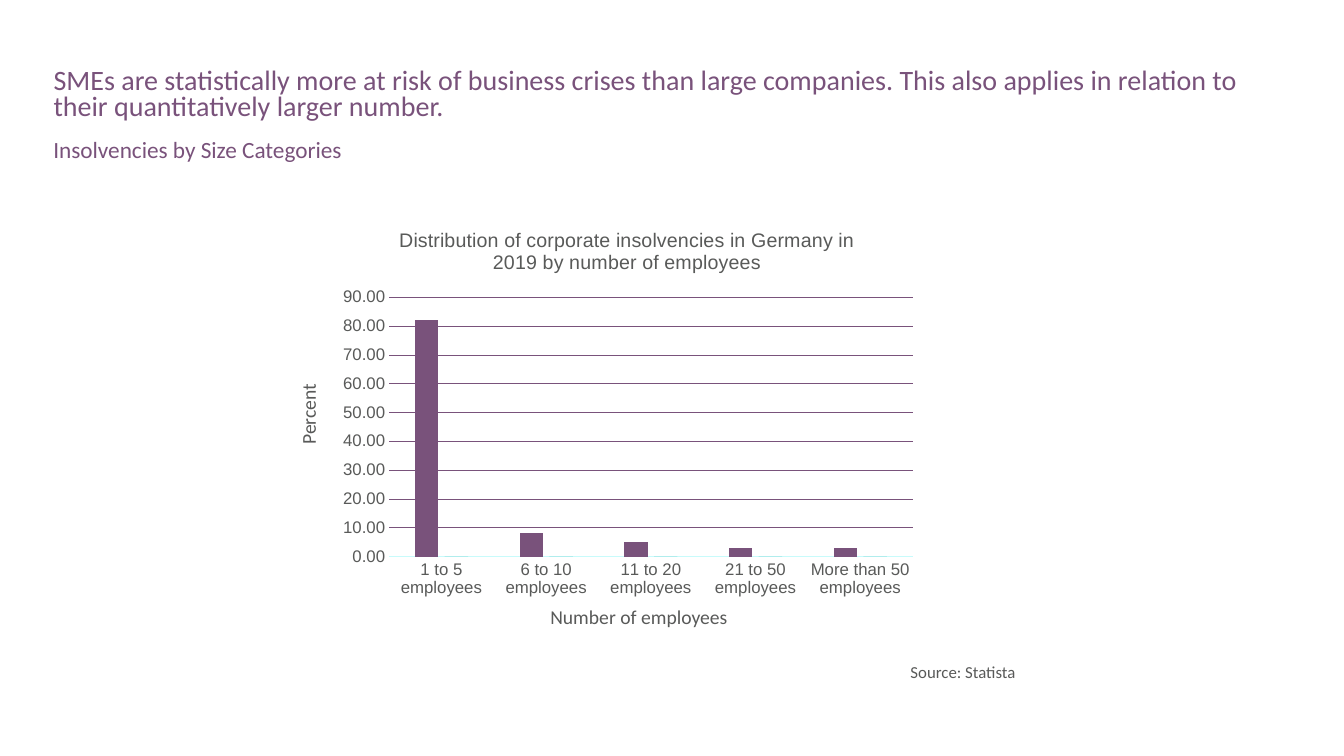
import pptx
import pptx.chart.data
import pptx.dml.color
import pptx.enum.chart
import pptx.enum.text
import pptx.util
from lxml import etree

COLOURS = {"plum": "79527B", "grey": "595A59", "teal": "0D9390", "mint": "C8FBFB"}

HEADLINE = ("SMEs are statistically more at risk of business crises than large companies. "
            "This also applies in relation to their quantitatively larger number.")
TEXTS = [
    {"text": "Insolvencies by Size Categories", "place": (3.23, 18, 94.07, 4.4),
     "size": 16.6, "colour": "plum", "spacing": 0.8},
    {"text": "Source: Statista", "place": (67.07, 86.27, 13.88, 4),
     "size": 12, "colour": "grey", "spacing": 1.25, "inset": (0.09, 0.04)},
    {"text": "Percent", "place": (18.53, 50, 8.85, 4.53),
     "size": 14, "colour": "grey", "rotation": 270},
    {"text": "Number of employees", "place": (40.21, 79.33, 20.03, 7.6),
     "size": 14, "colour": "grey"},
]
HEADLINE_FORMAT = {"text": HEADLINE, "place": (3.23, 8.4, 94.07, 8.53),
                   "size": 20, "colour": "plum", "spacing": 0.8}

CHART_TITLE = "Distribution of corporate insolvencies in Germany in 2019 by number of employees"
CHART_PLACE = (24.53, 27.87, 44.26, 52)
PLOT_SHARES = {"x": 0.1, "y": 0.22, "w": 0.88, "h": 0.66}
SIZES = ["1 to 5 employees", "6 to 10 employees", "11 to 20 employees",
         "21 to 50 employees", "More than 50 employees"]
SERIES = [("Series 1", (82, 8, 5, 3, 3), "plum"),
          ("Series 2", (0, 0, 0, 0, 0), "teal")]

deck = pptx.Presentation()
deck.slide_width = pptx.util.Inches(13.33)
deck.slide_height = pptx.util.Inches(7.5)
slide = deck.slides.add_slide(deck.slide_layouts[5])


def rgb(name):
    return pptx.dml.color.RGBColor.from_string(COLOURS[name])


def area(place):
    column, row = deck.slide_width / 100, deck.slide_height / 100
    left, top, width, height = place
    return int(left * column), int(top * row), int(width * column), int(height * row)


def style_font(font, size, colour, family):
    for key, value in {"size": pptx.util.Pt(size), "name": family, "bold": False}.items():
        setattr(font, key, value)
    font.color.rgb = rgb(colour)


def write(box, content):
    box.left, box.top, box.width, box.height = area(content["place"])
    box.rotation = content.get("rotation", 0)
    across, down = map(pptx.util.Inches, content.get("inset", (0.1, 0.05)))
    frame = box.text_frame
    frame.text = content["text"]
    frame_format = {"word_wrap": True, "auto_size": pptx.enum.text.MSO_AUTO_SIZE.NONE,
                    "vertical_anchor": pptx.enum.text.MSO_ANCHOR.TOP,
                    "margin_left": across, "margin_right": across,
                    "margin_top": down, "margin_bottom": down}
    for key, value in frame_format.items():
        setattr(frame, key, value)
    line = frame.paragraphs[0]
    line.alignment = pptx.enum.text.PP_ALIGN.LEFT
    line.line_spacing = content.get("spacing", 1.0)
    style_font(line.runs[0].font, content["size"], content["colour"], "Calibri")


def set_plot_area(chart):
    plot_area = chart.plots[0]._element.getparent()
    namespace = etree.QName(plot_area).namespace
    for old in plot_area.findall(f"{{{namespace}}}layout"):
        plot_area.remove(old)
    layout = etree.Element(f"{{{namespace}}}layout")
    manual = etree.SubElement(layout, f"{{{namespace}}}manualLayout")
    settings = {"layoutTarget": "inner", "xMode": "edge", "yMode": "edge", **PLOT_SHARES}
    for tag, value in settings.items():
        etree.SubElement(manual, f"{{{namespace}}}{tag}").set("val", str(value))
    plot_area.insert(0, layout)


def draw_chart():
    data = pptx.chart.data.CategoryChartData()
    data.categories = SIZES
    for name, values, colour in SERIES:
        data.add_series(name, values)
    chart = slide.shapes.add_chart(
        pptx.enum.chart.XL_CHART_TYPE.COLUMN_CLUSTERED, *area(CHART_PLACE), data).chart
    chart.has_legend = False
    style_font(chart.font, 12, "grey", "Arial")

    chart.has_title = True
    chart.chart_title.include_in_layout = False
    title = chart.chart_title.text_frame
    title.text = CHART_TITLE
    style_font(title.paragraphs[0].runs[0].font, 14, "grey", "Arial")

    plot = chart.plots[0]
    for key, value in {"gap_width": 219, "overlap": -27, "vary_by_categories": False}.items():
        setattr(plot, key, value)
    for bars, (name, values, colour) in zip(plot.series, SERIES):
        bars.format.fill.solid()
        bars.format.fill.fore_color.rgb = rgb(colour)

    sizes, percent = chart.category_axis, chart.value_axis
    for axis in (sizes, percent):
        axis.major_tick_mark = axis.minor_tick_mark = pptx.enum.chart.XL_TICK_MARK.NONE
        style_font(axis.tick_labels.font, 12, "grey", "Arial")
    sizes.format.line.color.rgb = rgb("mint")
    sizes.format.line.width = pptx.util.Pt(0.75)
    for key, value in {"minimum_scale": 0, "maximum_scale": 90, "major_unit": 10}.items():
        setattr(percent, key, value)
    percent.format.line.fill.background()
    percent.major_gridlines.format.line.color.rgb = rgb("plum")
    percent.major_gridlines.format.line.width = pptx.util.Pt(0.25)
    percent.tick_labels.number_format = "#,##0.00"
    percent.tick_labels.number_format_is_linked = False
    set_plot_area(chart)


write(slide.shapes.title, HEADLINE_FORMAT)
draw_chart()
for content in TEXTS:
    write(slide.shapes.add_textbox(*area(content["place"])), content)

deck.save("out.pptx")
